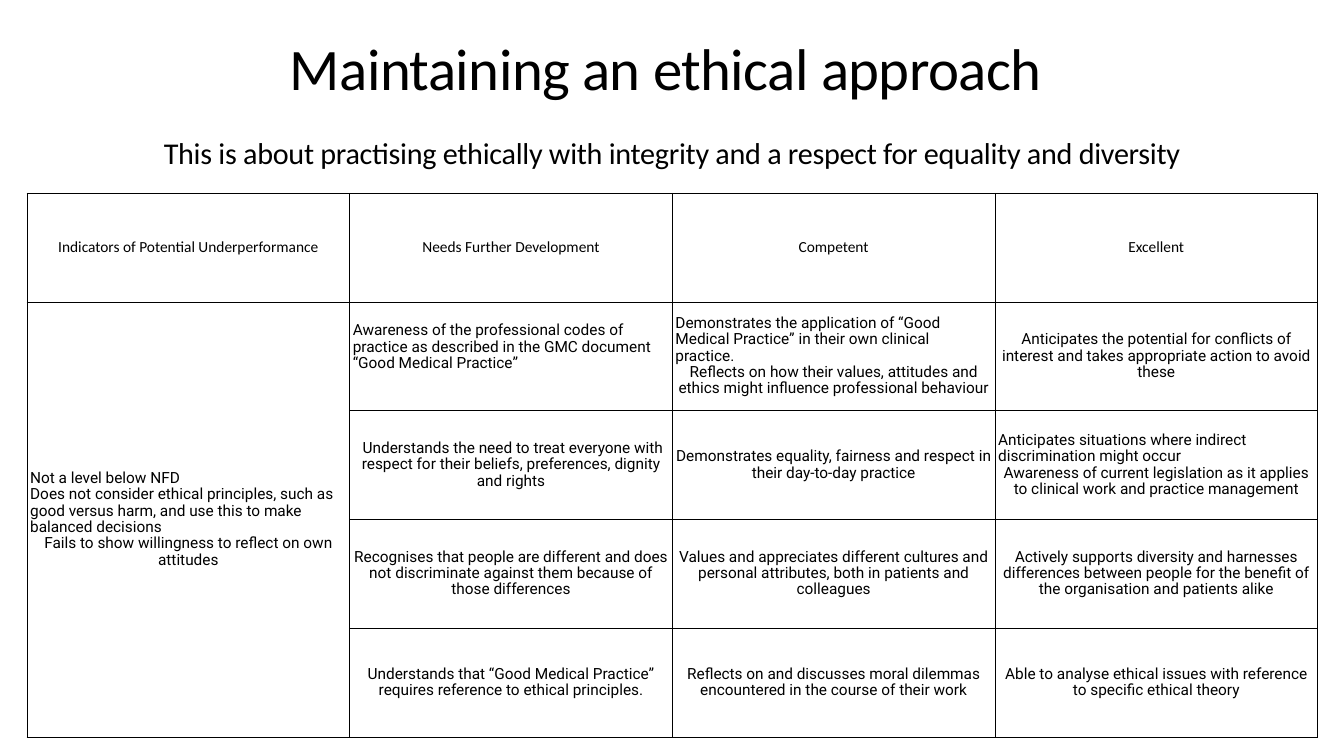
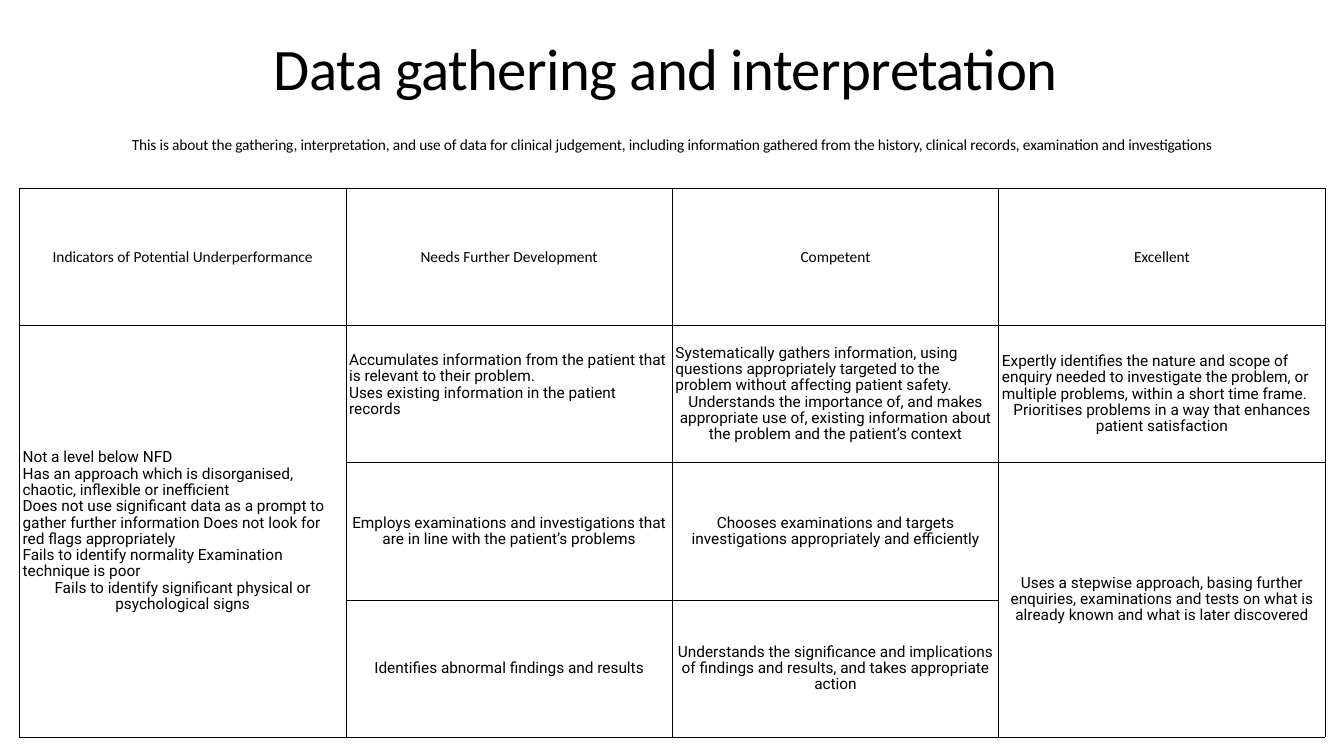
from dataclasses import dataclass
from typing import Optional

from lxml.etree import SubElement
from pptx import Presentation
from pptx.dml.color import RGBColor
from pptx.enum.text import MSO_ANCHOR, PP_ALIGN
from pptx.oxml.ns import qn
from pptx.slide import Slide
from pptx.table import _Cell
from pptx.text.text import _Paragraph
from pptx.util import Cm, Pt


@dataclass(frozen=True)
class Theme:
    """Colours, fonts and sizes shared by the slides."""

    ink: str = "000000"
    heading_font: str = "Calibri"
    body_font: str = "Roboto"
    title_size: float = 84
    cell_size: float = 22
    border_pt: float = 1
    inset: float = 0.16
    title_spacing: float = 0.8
    cell_spacing: float = 0.9


@dataclass(frozen=True)
class Entry:
    """Text lines of a cell: all are left aligned except a centred closing line."""

    lines: tuple[str, ...]
    closing: str = ""


@dataclass(frozen=True)
class Grid:
    """Place of a table, its cell size and its rows; None continues the cell above."""

    left: float
    top: float
    col_width: float
    row_height: float
    rows: tuple[tuple[Optional[Entry], ...], ...]


@dataclass(frozen=True)
class Competency:
    """One slide: a title, a definition and a grid of levels."""

    title: str
    definition: str
    definition_size: float
    tracking: float
    grid: Grid


THEME = Theme()
LEVELS = ("Indicators of Potential Underperformance", "Needs Further Development",
          "Competent", "Excellent")


def entry(*lines: str) -> Entry:
    """Make an entry whose last line is centred."""
    return Entry(lines[:-1], lines[-1])


ETHICS = Competency(
    "Maintaining an ethical approach ",
    "This is about practising ethically with integrity and a respect for equality and diversity",
    43.1, -0.4,
    Grid(1.36, 9.74, 16.26, 5.48, (
        (entry("Not a level below NFD",
               "Does not consider ethical principles, such as good versus harm, "
               "and use this to make balanced decisions",
               "Fails to show willingness to reflect on own attitudes"),
         Entry(("Awareness of the professional codes of practice as described in the "
                "GMC document “Good Medical Practice”",)),
         entry("Demonstrates the application of “Good Medical Practice” in their own "
               "clinical practice.",
               "Reflects on how their values, attitudes and ethics might influence "
               "professional behaviour"),
         entry("Anticipates the potential for conflicts of interest and takes "
               "appropriate action to avoid these")),
        (None,
         entry(" Understands the need to treat everyone with respect for their beliefs, "
               "preferences, dignity and rights"),
         entry("Demonstrates equality, fairness and respect in their day-to-day practice"),
         entry("Anticipates situations where indirect discrimination might occur",
               "Awareness of current legislation as it applies to clinical work and "
               "practice management")),
        (None,
         entry("Recognises that people are different and does not discriminate against "
               "them because of those differences"),
         entry("Values and appreciates different cultures and personal attributes, both "
               "in patients and colleagues"),
         entry("Actively supports diversity and harnesses differences between people for "
               "the benefit of the organisation and patients alike")),
        (None,
         entry("Understands that “Good Medical Practice” requires reference to ethical "
               "principles."),
         entry("Reflects on and discusses moral dilemmas encountered in the course of "
               "their work"),
         entry("Able to analyse ethical issues with reference to specific ethical theory")),
    )),
)

DATA = Competency(
    "Data gathering and interpretation ",
    "This is about the gathering, interpretation, and use of data for clinical judgement, "
    "including information gathered from the history, clinical records, examination and "
    "investigations",
    22, -0.2,
    Grid(0.98, 9.5, 16.45, 6.91, (
        (entry("Not a level below NFD",
               "Has an approach which is disorganised, chaotic, inflexible or inefficient",
               "Does not use significant data as a prompt to gather further information "
               "Does not look for red flags appropriately",
               "Fails to identify normality Examination technique is poor",
               "Fails to identify significant physical or psychological signs"),
         Entry(("Accumulates information from the patient that is relevant to their problem.",
                "Uses existing information in the patient records")),
         entry("Systematically gathers information, using questions appropriately targeted "
               "to the problem without affecting patient safety.",
               "Understands the importance of, and makes appropriate use of, existing "
               "information about the problem and the patient’s context"),
         entry("Expertly identifies the nature and scope of enquiry needed to investigate "
               "the problem, or multiple problems, within a short time frame.",
               "Prioritises problems in a way that enhances patient satisfaction")),
        (None,
         entry("Employs examinations and investigations that are in line with the "
               "patient’s problems"),
         entry("Chooses examinations and targets investigations appropriately and efficiently"),
         entry("Uses a stepwise approach, basing further enquiries, examinations and tests "
               "on what is already known and what is later discovered")),
        (None,
         entry("Identifies abnormal findings and results"),
         entry("Understands the significance and implications of findings and results, and "
               "takes appropriate action"),
         None),
    )),
)


def add_run(p: _Paragraph, text: str, font: str, size: float, tracking: float = 0) -> None:
    """Add one styled run to a paragraph."""
    r = p.add_run()
    r.text = text
    r.font.name = font
    r.font.size = Pt(size)
    r.font.color.rgb = RGBColor.from_string(THEME.ink)
    if tracking:
        r.font._element.set("spc", str(round(tracking * 100)))


def add_heading(s: Slide, text: str, top: float, height: float, size: float,
                tracking: float, spacing: float) -> None:
    """Add a centred line of text across the slide."""
    tf = s.shapes.add_textbox(Cm(3.39), Cm(top), Cm(60.96), Cm(height)).text_frame
    tf.word_wrap = True
    tf.margin_left = tf.margin_right = tf.margin_top = tf.margin_bottom = Cm(THEME.inset)
    p = tf.paragraphs[0]
    p.alignment = PP_ALIGN.CENTER
    p.line_spacing = spacing
    add_run(p, text, THEME.heading_font, size, tracking)


def style_cell(cell: _Cell) -> None:
    """Give a cell thin borders, narrow margins and no fill."""
    cell.margin_left = cell.margin_right = Cm(THEME.inset)
    cell.margin_top = cell.margin_bottom = Cm(THEME.inset)
    cell.vertical_anchor = MSO_ANCHOR.MIDDLE
    tc_pr = cell._tc.get_or_add_tcPr()
    for side in ("a:lnL", "a:lnR", "a:lnT", "a:lnB"):
        ln = SubElement(tc_pr, qn(side), w=str(Pt(THEME.border_pt)))
        SubElement(SubElement(ln, qn("a:solidFill")), qn("a:srgbClr"), val=THEME.ink)
    cell.fill.background()


def fill_cell(cell: _Cell, item: Entry, font: str) -> None:
    """Write the lines of an entry, one paragraph each."""
    tf = cell.text_frame
    lines = [(text, PP_ALIGN.LEFT) for text in item.lines]
    if item.closing:
        lines.append((item.closing, PP_ALIGN.CENTER))
    else:
        cell.margin_bottom = Cm(THEME.inset + 0.92)
    for i, (text, alignment) in enumerate(lines):
        p = tf.add_paragraph() if i else tf.paragraphs[0]
        p.alignment = alignment
        p.line_spacing = THEME.cell_spacing
        add_run(p, text, font, THEME.cell_size)


def add_grid(s: Slide, grid: Grid) -> None:
    """Add the table of levels and merge the continued cells."""
    rows = (tuple(entry(level) for level in LEVELS), *grid.rows)
    n_rows, n_cols = len(rows), len(LEVELS)
    table = s.shapes.add_table(n_rows, n_cols, Cm(grid.left), Cm(grid.top),
                               Cm(grid.col_width * n_cols),
                               Cm(grid.row_height * n_rows)).table
    table.first_row = table.horz_banding = False
    for col in table.columns:
        col.width = Cm(grid.col_width)
    for i, items in enumerate(rows):
        table.rows[i].height = Cm(grid.row_height)
        for j, item in enumerate(items):
            style_cell(table.cell(i, j))
            if item:
                font = THEME.body_font if i else THEME.heading_font
                fill_cell(table.cell(i, j), item, font)
    for j in range(n_cols):
        start = 0
        for i in range(1, n_rows):
            if rows[i][j]:
                start = i
            elif i + 1 == n_rows or rows[i + 1][j]:
                table.cell(start, j).merge(table.cell(i, j))


def add_competency(prs: Presentation, item: Competency) -> None:
    """Add one competency slide."""
    s = prs.slides.add_slide(prs.slide_layouts[6])
    add_heading(s, item.title, 2.15, 4.8, THEME.title_size, -0.8, THEME.title_spacing)
    add_heading(s, item.definition, 6.63, 2.31, item.definition_size, item.tracking, 1.0)
    add_grid(s, item.grid)


def main() -> None:
    """Build and save the slides."""
    prs = Presentation()
    prs.slide_width, prs.slide_height = Cm(67.73), Cm(38.1)
    for item in (ETHICS, DATA):
        add_competency(prs, item)
    prs.save("out.pptx")


if __name__ == "__main__":
    main()
